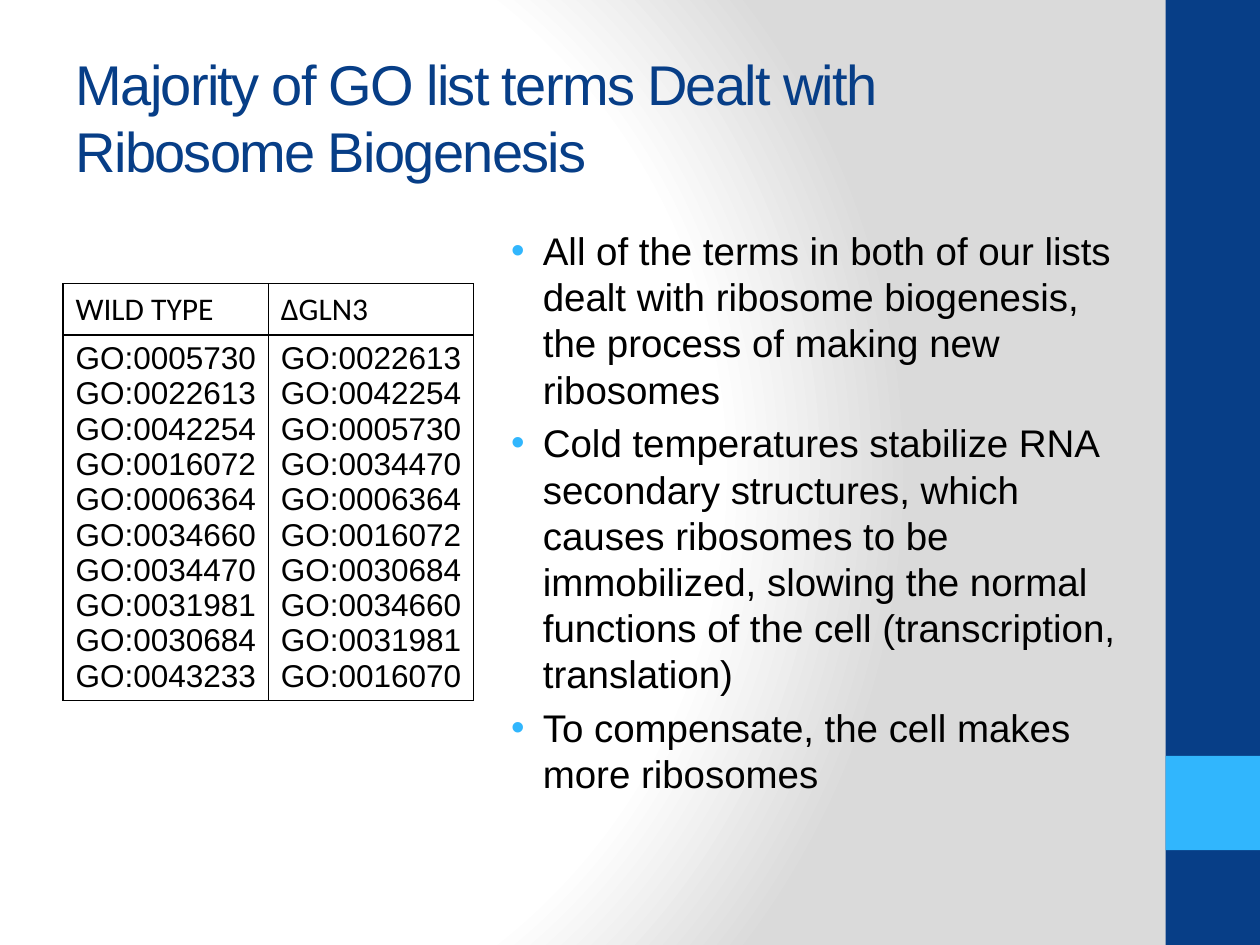
import pptx
import pptx.dml.color
import pptx.enum.shapes
import pptx.enum.text
import pptx.oxml
import pptx.oxml.ns
import pptx.util

Cm = pptx.util.Cm
Pt = pptx.util.Pt
NS = pptx.oxml.ns.nsdecls("a", "p")

HUES = {
    "navy": "073E87",
    "sky": "31B6FD",
    "black": "000000",
    "white": "FFFFFF",
    "grey": "DADADA",
}
TITLE = "Majority of GO list terms Dealt with Ribosome Biogenesis"
POINTS = [
    "All of the terms in both of our lists dealt with ribosome biogenesis, "
    "the process of making new ribosomes",
    "Cold temperatures stabilize RNA secondary structures, which causes "
    "ribosomes to be immobilized, slowing the normal functions of the cell "
    "(transcription, translation)",
    "To compensate, the cell makes more ribosomes",
]
TERMS = {
    "WILD TYPE": ["0005730", "0022613", "0042254", "0016072", "0006364",
                  "0034660", "0034470", "0031981", "0030684", "0043233"],
    "ΔGLN3": ["0022613", "0042254", "0005730", "0034470", "0006364",
              "0016072", "0030684", "0034660", "0031981", "0016070"],
}


def place(shape, left, top, width, height):
    shape.left, shape.top = Cm(left), Cm(top)
    shape.width, shape.height = Cm(width), Cm(height)


def add_run(para, text, size, hue, font="Arial"):
    run = para.add_run()
    run.text = text
    run.font.size = Pt(size)
    run.font.name = font
    run.font.bold = False
    run.font.color.rgb = pptx.dml.color.RGBColor.from_string(HUES[hue])
    return run


def add_lines(frame, lines):
    """Yield each line with its own paragraph."""
    for i, line in enumerate(lines):
        yield line, frame.add_paragraph() if i else frame.paragraphs[0]


def set_back(slide):
    stops = "".join(
        f'<a:gs pos="{pos}"><a:srgbClr val="{HUES[hue]}"/></a:gs>'
        for pos, hue in ((0, "white"), (75000, "white"), (100000, "grey")))
    back = pptx.oxml.parse_xml(
        f'<p:bg {NS}><p:bgPr><a:gradFill rotWithShape="1">'
        f'<a:gsLst>{stops}</a:gsLst><a:path path="circle">'
        '<a:fillToRect l="20000" t="50000" r="100000" b="50000"/></a:path>'
        '</a:gradFill><a:effectLst/></p:bgPr></p:bg>')
    slide.element.cSld.insert(0, back)


def add_bar(slide, top, height, hue):
    bar = slide.shapes.add_shape(
        pptx.enum.shapes.MSO_SHAPE.RECTANGLE,
        Cm(23.5), Cm(top), Cm(1.9), Cm(height))
    bar.shadow.inherit = False
    bar.fill.solid()
    bar.fill.fore_color.rgb = pptx.dml.color.RGBColor.from_string(HUES[hue])
    bar.line.fill.background()


def fill_title(shape):
    place(shape, 1.27, 0.76, 21.16, 3.18)
    frame = shape.text_frame
    frame.auto_size = pptx.enum.text.MSO_AUTO_SIZE.NONE
    frame.vertical_anchor = pptx.enum.text.MSO_ANCHOR.MIDDLE
    para = frame.paragraphs[0]
    para.alignment = pptx.enum.text.PP_ALIGN.LEFT
    run = add_run(para, TITLE, 32, "navy")
    run.font._element.set("spc", "-100")


def fill_list(shape):
    place(shape, 9.73, 4.45, 13.13, 12.07)
    frame = shape.text_frame
    frame.auto_size = pptx.enum.text.MSO_AUTO_SIZE.NONE
    for text, para in add_lines(frame, POINTS):
        para.space_before = Pt(4.4)
        props = para._p.get_or_add_pPr()
        props.set("marL", str(Cm(0.96)))
        props.set("indent", str(Cm(-0.64)))
        for mark in (
                f'<a:buClr {NS}><a:srgbClr val="{HUES["sky"]}"/></a:buClr>',
                f'<a:buFont {NS} typeface="Arial"/>',
                f'<a:buChar {NS} char="•"/>'):
            props.append(pptx.oxml.parse_xml(mark))
        add_run(para, text, 22, "black")


def fill_cell(cell, lines, font):
    cell.margin_right = Cm(0.2)
    for text, para in add_lines(cell.text_frame, lines):
        add_run(para, text, 18, "black", font)
    # Borders come before the fill
    props = cell._tc.get_or_add_tcPr()
    for side in "LRTB":
        props.append(pptx.oxml.parse_xml(
            f'<a:ln{side} {NS} w="12700"><a:solidFill>'
            f'<a:srgbClr val="{HUES["black"]}"/></a:solidFill></a:ln{side}>'))
    cell.fill.background()


def add_terms(slide):
    grid = slide.shapes.add_table(
        2, len(TERMS), Cm(1.27), Cm(5.72), Cm(8.28), Cm(8.4)).table
    grid.first_row = False
    grid.horz_banding = False
    grid.rows[0].height, grid.rows[1].height = Cm(1.03), Cm(7.37)
    for i, (head, codes) in enumerate(TERMS.items()):
        grid.columns[i].width = Cm(4.14)
        fill_cell(grid.cell(0, i), [head], "Calibri")
        fill_cell(grid.cell(1, i), [f"GO:{code}" for code in codes], "Arial")


def main():
    deck = pptx.Presentation()
    deck.slide_width, deck.slide_height = Cm(25.4), Cm(19.05)
    slide = deck.slides.add_slide(deck.slide_layouts[1])

    # Backdrop and side bars
    set_back(slide)
    add_bar(slide, 0, 19.05, "navy")
    add_bar(slide, 15.24, 1.9, "sky")

    # Content
    fill_title(slide.shapes.title)
    add_terms(slide)
    fill_list(slide.placeholders[1])

    deck.save("out.pptx")


if __name__ == "__main__":
    main()
